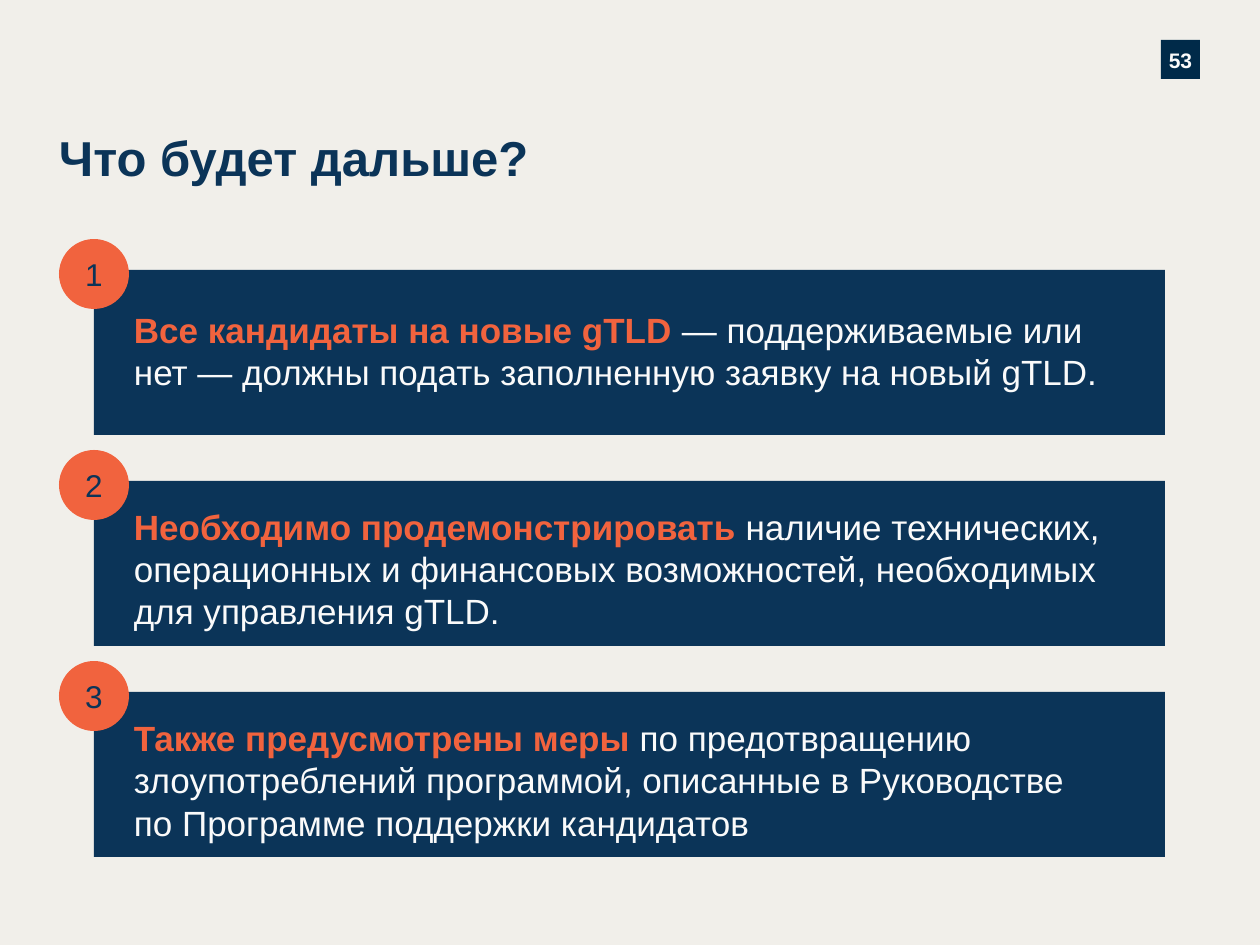
from pptx import Presentation
from pptx.dml.color import RGBColor
from pptx.enum.shapes import MSO_SHAPE
from pptx.enum.text import MSO_ANCHOR, PP_ALIGN
from pptx.util import Pt

RECT, OVAL = MSO_SHAPE.RECTANGLE, MSO_SHAPE.OVAL
TOP, MIDDLE = MSO_ANCHOR.TOP, MSO_ANCHOR.MIDDLE
LEFT, CENTER = PP_ALIGN.LEFT, PP_ALIGN.CENTER
PX = 914400 // 126
NAVY, DARK, ORANGE, WHITE, CREAM = "0B3458", "002A49", "F1633E", "FAFAFA", "F1EFEA"
rgb = RGBColor.from_string


def add_block(s, kind, box, color):
    sp = s.shapes.add_shape(kind, *(v * PX for v in box))
    sp.shadow.inherit = False
    sp.fill.solid()
    sp.fill.fore_color.rgb = rgb(color)
    sp.line.fill.background()
    return sp


def write(sp, runs, size, anchor, align, spacing, insets=(0, 0, 0, 0)):
    """Fill a shape with runs of (text, color, bold)."""
    tf = sp.text_frame
    frame = {"word_wrap": True, "vertical_anchor": anchor}
    for side, inset in zip(("left", "top", "right", "bottom"), insets):
        frame["margin_" + side] = inset * PX
    for name, value in frame.items():
        setattr(tf, name, value)
    p = tf.paragraphs[0]
    p.alignment, p.line_spacing = align, spacing
    for text, color, bold in runs:
        for i, line in enumerate(text.split("\n")):
            if i:
                p.add_line_break()
            r = p.add_run()
            r.text = line
            for name, value in {"name": "Arial", "size": Pt(size), "bold": bold}.items():
                setattr(r.font, name, value)
            r.font.color.rgb = rgb(color)


prs = Presentation()
prs.slide_width, prs.slide_height = 1260 * PX, 945 * PX
s = prs.slides.add_slide(prs.slide_layouts[5])
s.background.fill.solid()
s.background.fill.fore_color.rgb = rgb(CREAM)

# Page number
sp = add_block(s, RECT, (1161, 40, 39, 39), DARK)
write(sp, [("53", WHITE, True)], 12, MIDDLE, CENTER, 1.08)

# Title
title = s.shapes.title
for name, value in {"left": 59, "top": 123, "width": 741, "height": 73}.items():
    setattr(title, name, value * PX)
write(title, [("Что будет дальше?", NAVY, True)], 28, TOP, LEFT, Pt(36))

# Numbered steps: highlighted lead, remaining text, top inset
steps = [
    ("Все кандидаты на новые gTLD ",
     "— поддерживаемые или нет — должны подать заполненную заявку на новый gTLD.", 39),
    ("Необходимо продемонстрировать ",
     "наличие технических, операционных и финансовых возможностей, "
     "необходимых для управления gTLD.", 25),
    ("Также предусмотрены меры ",
     "по предотвращению злоупотреблений программой, описанные в Руководстве\n"
     "по Программе поддержки кандидатов", 25),
]
for i, (lead, rest, inset) in enumerate(steps):
    top = 270 + i * 211
    sp = add_block(s, RECT, (94, top, 1071, 165), NAVY)
    write(sp, [(lead, ORANGE, True), (rest, WHITE, False)],
          20, TOP, LEFT, Pt(24), (40, inset, 44, 39))
    sp = add_block(s, OVAL, (59, top - 31, 70, 70), ORANGE)
    write(sp, [(str(i + 1), NAVY, False)], 18, MIDDLE, CENTER, 1.0, (13, 6, 13, 6))

prs.save("out.pptx")
